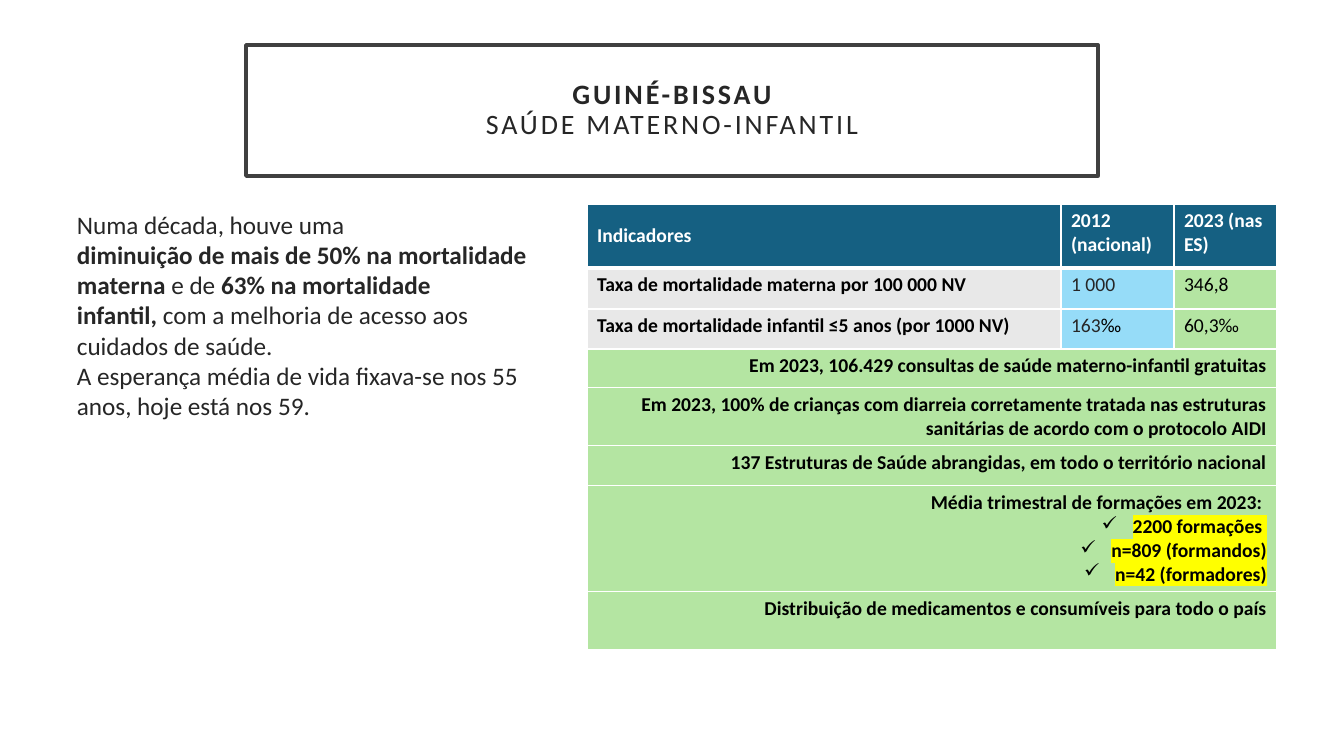
"""Builds the slide on maternal and child health in Guiné-Bissau."""
from lxml.etree import SubElement
from pptx import Presentation
from pptx.dml.color import RGBColor
from pptx.enum.shapes import MSO_SHAPE as Shape
from pptx.enum.text import MSO_ANCHOR as Anchor, PP_ALIGN as Align
from pptx.oxml.ns import qn
from pptx.util import Emu, Pt

WHITE, BLACK, INK, FRAME = "FFFFFF", "000000", "262626", "404040"
BLUE, SKY, GREEN, GREY, YELLOW = "156082", "96DCF8", "B4E5A2", "E8E8E8", "FFFF00"

BODY = [
    [("Numa década, houve uma", False)],
    [("diminuição de mais de 50% na mortalidade materna ", True), ("e de ", False),
     ("63% na mortalidade", True)],
    [("infantil,", True), (" com a melhoria de acesso aos cuidados de saúde.", False)],
    [("A esperança média de vida fixava-se nos 55 anos, hoje está nos 59.", False)],
]
HEADINGS = ["Indicadores", "2012 (nacional)", "2023 (nas ES)"]
RATES = [
    ("Taxa de mortalidade materna por 100 000 NV", [("1 000", INK)], "346,8"),
    ("Taxa de mortalidade infantil ≤5 anos (por 1000 NV)",
     [("163", INK), ("‰", BLACK)], "60,3‰"),
]
RESULTS = [
    ["Em 2023, 106.429 consultas de saúde materno-infantil gratuitas"],
    ["Em 2023, 100% de crianças com diarreia corretamente tratada nas estruturas "
     "sanitárias de acordo com o protocolo AIDI"],
    ["137 Estruturas de Saúde abrangidas, em todo o território nacional"],
    ["Média trimestral de formações em 2023: ", "2200 formações ",
     "n=809 (formandos)", "n=42 (formadores)"],
    ["Distribuição de medicamentos e consumíveis para todo o país"],
]
COLUMN_WIDTHS = [474, 113, 103]
ROW_HEIGHTS = [64, 41, 40, 39, 58, 40, 105, 58]


def px(length):
    """Turn pixels into EMU at 100.8 pixels to the inch."""
    return Emu(length * 9144000 // 1008)


def colour(code):
    """Turn a hex string into a colour."""
    return RGBColor.from_string(code)


def add_element(parent, tag, **attributes):
    """Append a DrawingML element and return it."""
    return SubElement(parent, qn(tag), attributes)


def add_run(paragraph, text, ink, **formats):
    """Add a Calibri run with the given font values."""
    run = paragraph.add_run()
    run.text = text
    run.font.color.rgb = colour(ink)
    for name, value in {"name": "Calibri", **formats}.items():
        setattr(run.font, name, value)
    return run


def next_paragraph(frame, index):
    """Return the first paragraph of a frame or a new one after it."""
    return frame.add_paragraph() if index else frame.paragraphs[0]


def add_check(paragraph):
    """Give a paragraph a hanging check mark."""
    properties = paragraph._p.get_or_add_pPr()
    properties.set("marL", str(px(31)))
    properties.set("indent", str(-px(31)))
    add_element(properties, "a:buChar", char="✓")


def highlight(run, code):
    """Mark a run with a background colour."""
    properties = run._r.get_or_add_rPr()
    mark = add_element(properties, "a:highlight")
    add_element(mark, "a:srgbClr", val=code)
    properties.find(qn("a:latin")).addprevious(mark)


def style_cell(cell, fill, bottom=1):
    """Give a cell white borders and a plain fill."""
    properties = cell._tc.get_or_add_tcPr()
    for side, width in {"L": 1, "R": 1, "T": 1, "B": bottom}.items():
        border = add_element(properties, f"a:ln{side}", w=str(Pt(width)))
        add_element(add_element(border, "a:solidFill"), "a:srgbClr", val=WHITE)
    cell.fill.solid()
    cell.fill.fore_color.rgb = colour(fill)


def add_title(slide):
    """Draw the framed two-line title."""
    title = slide.shapes.add_shape(Shape.RECTANGLE, px(246), px(45), px(852), px(131))
    title.shadow.inherit = False
    title.fill.solid()
    title.fill.fore_color.rgb = colour(WHITE)
    white = title.fill._xPr.find(qn("a:solidFill"))[0]
    add_element(white, "a:alpha", val="45000")
    title.line.color.rgb = colour(FRAME)
    title.line.width = Pt(2.5)
    frame = title.text_frame
    margins = dict.fromkeys(
        ["margin_left", "margin_top", "margin_right", "margin_bottom"], px(20))
    for name, value in {"vertical_anchor": Anchor.MIDDLE, "word_wrap": True, **margins}.items():
        setattr(frame, name, value)
    for index, text in enumerate(["GUINÉ-BISSAU", "SAÚDE MATERNO-INFANTIL"]):
        line = next_paragraph(frame, index)
        line.alignment = Align.CENTER
        line.line_spacing = 0.9
        run = add_run(line, text, INK, size=Pt(20), bold=index == 0)
        run._r.get_or_add_rPr().set("spc", "200")


def add_body(slide):
    """Write the summary on the left."""
    frame = slide.shapes.add_textbox(px(67), px(204), px(494), px(254)).text_frame
    frame.word_wrap = True
    for index, runs in enumerate(BODY):
        paragraph = next_paragraph(frame, index)
        for text, bold in runs:
            add_run(paragraph, text, INK, size=Pt(18), bold=bold)


def fill_cell(cell, fill, runs, bold, bottom=1):
    """Style a cell and write one paragraph of coloured runs."""
    style_cell(cell, fill, bottom)
    for text, ink in runs:
        add_run(cell.text_frame.paragraphs[0], text, ink, size=Pt(14), bold=bold)


def add_result(cells, lines):
    """Merge a row and write its right-aligned result and checked items."""
    for cell in cells:
        style_cell(cell, GREEN)
    cells[0].merge(cells[-1])
    for index, text in enumerate(lines):
        paragraph = next_paragraph(cells[0].text_frame, index)
        paragraph.alignment = Align.RIGHT
        if index:
            add_check(paragraph)
        run = add_run(paragraph, text, BLACK, size=Pt(14), bold=True)
        if index:
            highlight(run, YELLOW)


def add_indicators(slide):
    """Build the table of indicators and results."""
    table = slide.shapes.add_table(
        len(ROW_HEIGHTS), len(COLUMN_WIDTHS), px(587), px(204),
        px(sum(COLUMN_WIDTHS)), px(sum(ROW_HEIGHTS))).table
    for column, width in zip(table.columns, COLUMN_WIDTHS):
        column.width = px(width)
    for row, height in zip(table.rows, ROW_HEIGHTS):
        row.height = px(height)
    heading_row, *other_rows = [list(row.cells) for row in table.rows]
    for cell, heading in zip(heading_row, HEADINGS):
        fill_cell(cell, BLUE, [(heading, WHITE)], True, bottom=3)
    heading_row[0].vertical_anchor = Anchor.MIDDLE
    for cells, (indicator, before, after) in zip(other_rows, RATES):
        fill_cell(cells[0], GREY, [(indicator, BLACK)], True)
        fill_cell(cells[1], SKY, before, False)
        fill_cell(cells[2], GREEN, [(after, BLACK)], False)
    for cells, lines in zip(other_rows[len(RATES):], RESULTS):
        add_result(cells, lines)


def main():
    """Build and save the slide."""
    deck = Presentation()
    deck.slide_width, deck.slide_height = px(1344), px(756)
    slide = deck.slides.add_slide(deck.slide_layouts[6])
    add_title(slide)
    add_indicators(slide)
    add_body(slide)
    deck.save("out.pptx")


if __name__ == "__main__":
    main()
